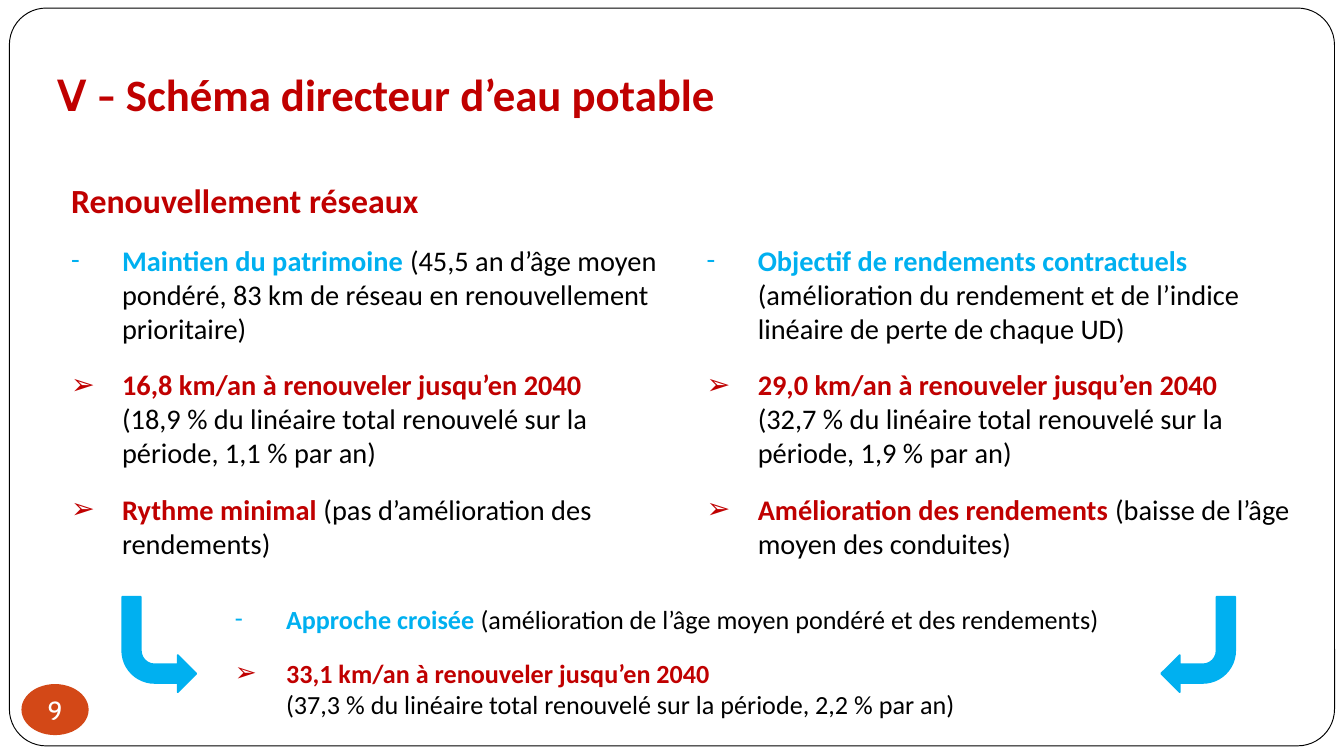
from lxml import etree
from pptx import Presentation
from pptx.dml.color import RGBColor
from pptx.enum.shapes import MSO_SHAPE as SHAPE
from pptx.enum.text import MSO_ANCHOR as ANCHOR, PP_ALIGN as ALIGN
from pptx.oxml.ns import qn
from pptx.util import Inches, Pt

RED, BLUE, BLACK, WHITE, ORANGE = "C00000", "00B0F0", "000000", "FFFFFF", "D34817"


def add_run(p, text, size, color, bold=False, font="Calibri"):
    r = p.add_run()
    r.text = text
    r.font.name, r.font.size, r.font.bold = font, Pt(size), bold
    r.font.color.rgb = RGBColor.from_string(color)


def add_shape(kind, box, fill, line=None, width=1):
    sp = s.shapes.add_shape(kind, *map(Inches, box))
    sp.shadow.inherit = False
    sp.fill.solid()
    sp.fill.fore_color.rgb = RGBColor.from_string(fill)
    if line:
        sp.line.color.rgb = RGBColor.from_string(line)
        sp.line.width = Pt(width)
    else:
        sp.line.fill.background()
    return sp


prs = Presentation()
prs.slide_width = Inches(10)
prs.slide_height = Inches(10) * 9 // 16
s = prs.slides.add_slide(prs.slide_layouts[6])

# Rounded frame
frame = add_shape(SHAPE.ROUNDED_RECTANGLE, (0.07, 0.06, 9.86, 5.49), WHITE, BLACK, 0.5)
frame.adjustments[0] = 0.05

# Title
tf = s.shapes.add_textbox(Inches(0.33), Inches(0.23), Inches(9.69), Inches(0.94)).text_frame
tf.word_wrap = True
tf.vertical_anchor = ANCHOR.MIDDLE
add_run(tf.paragraphs[0], "V - ", 24, RED, True, "Cabin")
add_run(tf.paragraphs[0], "Schéma directeur d’eau potable", 24, RED, True)

# Page number
badge = add_shape(SHAPE.OVAL, (0.16, 5.09, 0.5, 0.38), ORANGE)
tf = badge.text_frame
tf.margin_left = tf.margin_right = tf.margin_top = tf.margin_bottom = 0
tf.word_wrap = False
tf.vertical_anchor = ANCHOR.MIDDLE
tf.paragraphs[0].alignment = ALIGN.CENTER
add_run(tf.paragraphs[0], "9", 14, WHITE, font="Cabin")

# Text blocks: box, size, heading, items (bullet, bold lead, detail, detail on new line)
blocks = [
    ((0.43, 1.29, 4.65, 2.94), 15.2, "Renouvellement réseaux", [
        ("-", "Maintien du patrimoine ",
         "(45,5 an d’âge moyen pondéré, 83 km de réseau en renouvellement prioritaire)", False),
        ("➢", "16,8 km/an à renouveler jusqu’en 2040 ",
         "(18,9 % du linéaire total renouvelé sur la période, 1,1 % par an)", True),
        ("➢", "Rythme minimal ", "(pas d’amélioration des rendements)", False)]),
    ((5.16, 1.76, 4.65, 2.47), 15.2, None, [
        ("-", "Objectif de rendements contractuels ",
         "(amélioration du rendement et de l’indice linéaire de perte de chaque UD)", False),
        ("➢", "29,0 km/an à renouveler jusqu’en 2040 ",
         "(32,7 % du linéaire total renouvelé sur la période, 1,9 % par an)", True),
        ("➢", "Amélioration des rendements ", "(baisse de l’âge moyen des conduites)", False)]),
    ((1.65, 4.44, 7.05, 1.05), 14, None, [
        ("-", "Approche croisée ",
         "(amélioration de l’âge moyen pondéré et des rendements)", False),
        ("➢", "33,1 km/an à renouveler jusqu’en 2040 ",
         "(37,3 % du linéaire total renouvelé sur la période, 2,2 % par an)", True)]),
]
for box, size, heading, items in blocks:
    tf = s.shapes.add_textbox(*map(Inches, box)).text_frame
    tf.word_wrap = True
    p = tf.paragraphs[0]
    if heading:
        add_run(p, heading, 18.1, RED, True)
    for i, (bullet, lead, detail, new_line) in enumerate(items):
        if i or heading:
            p = tf.add_paragraph()
            p.space_before = Pt(12)
        pPr = p._p.get_or_add_pPr()
        pPr.set("marL", str(Inches(0.38)))
        pPr.set("indent", str(-Inches(0.38)))
        etree.SubElement(pPr, qn("a:buFont")).set("typeface", "Calibri")
        etree.SubElement(pPr, qn("a:buChar")).set("char", bullet)
        add_run(p, lead, size, BLUE if bullet == "-" else RED, True)
        if new_line:
            p.add_line_break()
        add_run(p, detail, size, BLACK)

# Bent arrows pointing to the combined approach
for x, flips in ((0.91, ["flipV"]), (8.64, ["flipH", "flipV"])):
    arrow = add_shape(SHAPE.BENT_ARROW, (x, 4.44, 0.55, 0.71), BLUE, BLUE)
    for flip in flips:
        arrow._element.spPr.xfrm.set(flip, "1")

prs.save("out.pptx")
